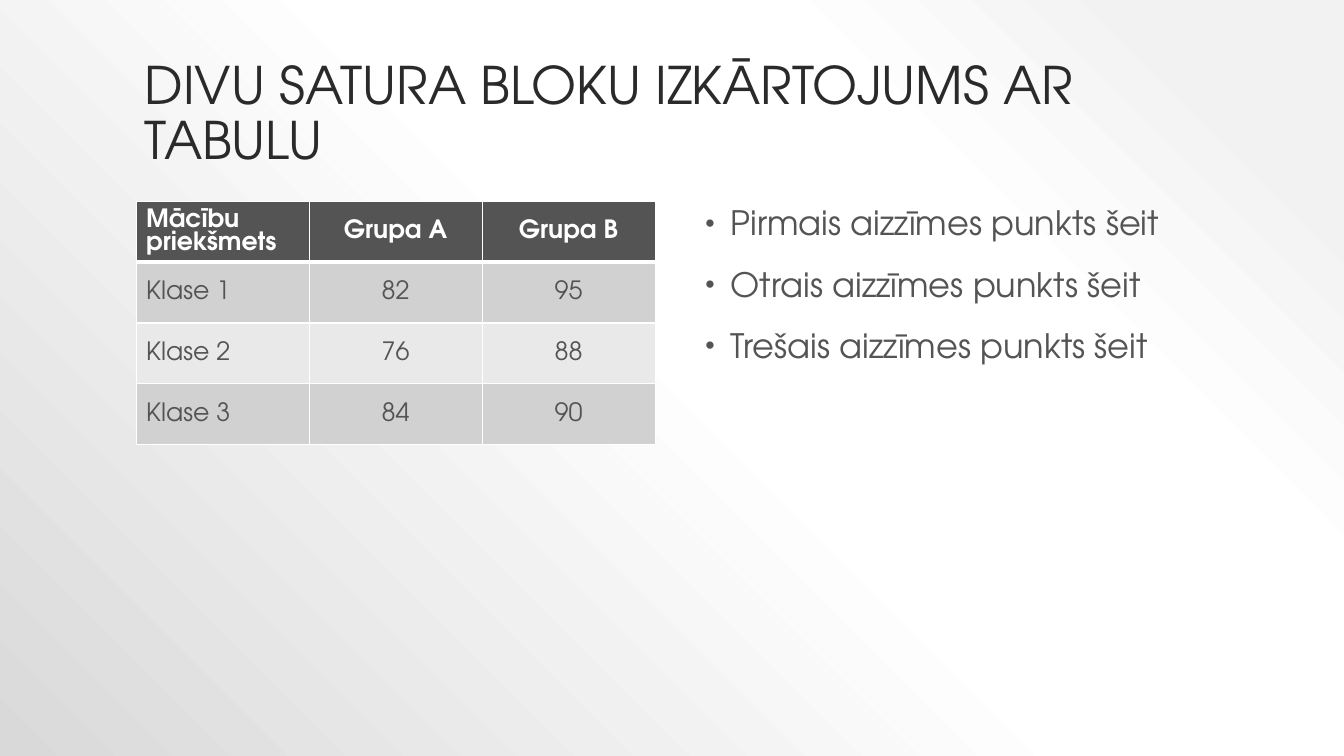
from pptx import Presentation
from pptx.dml.color import RGBColor
from pptx.enum.text import MSO_ANCHOR, PP_ALIGN
from pptx.oxml import parse_xml
from pptx.oxml.ns import nsdecls
from pptx.util import Cm, Pt

TITLE = "DIVU SATURA BLOKU IZKĀRTOJUMS AR TABULU"
ROWS = [
    ("Mācību priekšmets", "Grupa A", "Grupa B"),
    ("Klase 1", "82", "95"),
    ("Klase 2", "76", "88"),
    ("Klase 3", "84", "90"),
]
BULLETS = [
    "Pirmais aizzīmes punkts šeit",
    "Otrais aizzīmes punkts šeit",
    "Trešais aizzīmes punkts šeit",
]
BACKGROUND_STOPS = [(10, "F2F2F2"), (28, "FFFFFF"), (48, "FFFFFF"), (100, "D9D9D9")]

FONT = "TeX Gyre Adventor"
INK = RGBColor(0x2A, 0x2A, 0x2A)
GREY = RGBColor(0x54, 0x54, 0x54)
WHITE = RGBColor(0xFF, 0xFF, 0xFF)
BANDS = RGBColor(0xE9, 0xE9, 0xE9), RGBColor(0xD1, 0xD1, 0xD1)
MIDDLE, BOTTOM, TOP = MSO_ANCHOR.MIDDLE, MSO_ANCHOR.BOTTOM, MSO_ANCHOR.TOP
LEFT, CENTER = PP_ALIGN.LEFT, PP_ALIGN.CENTER

CONTENT_TOP = Cm(5.08)
COLUMN_WIDTH, ROW_HEIGHT = Cm(4.36), Cm(1.53)


def style(p, size, color, bold=False, align=LEFT, spacing=0.9):
    p.alignment, p.line_spacing = align, spacing
    f = p.font
    f.name, f.size, f.bold = FONT, Pt(size), bold
    f.color.rgb = color


def place(shape, left, top, width, height):
    shape.left, shape.top, shape.width, shape.height = left, top, width, height


def set_background(s):
    stops = "".join(
        f'<a:gs pos="{pos * 1000}"><a:srgbClr val="{color}"/></a:gs>'
        for pos, color in BACKGROUND_STOPS
    )
    s.background.fill.solid()
    bg_pr = s.element.cSld.bg.bgPr
    bg_pr.replace(bg_pr[0], parse_xml(
        f'<a:gradFill {nsdecls("a")} rotWithShape="1"><a:gsLst>{stops}</a:gsLst>'
        '<a:path path="circle"><a:fillToRect l="100000" b="100000"/></a:path>'
        '</a:gradFill>'
    ))


def add_borders(cell, is_header):
    """Insert white borders ahead of the cell's fill, thicker under the header."""
    tc_pr = cell._tc.get_or_add_tcPr()
    for i, side in enumerate(("lnL", "lnR", "lnT", "lnB")):
        width = Pt(3 if is_header and side == "lnB" else 1)
        tc_pr.insert(i, parse_xml(
            f'<a:{side} {nsdecls("a")} w="{width}"><a:solidFill>'
            f'<a:srgbClr val="{WHITE}"/></a:solidFill></a:{side}>'
        ))


def add_bullet(p):
    p_pr = p._p.get_or_add_pPr()
    p_pr.set("marL", str(Cm(0.76)))
    p_pr.set("indent", str(-Cm(0.64)))
    for tag in (
        f'<a:buClr {nsdecls("a")}><a:srgbClr val="{GREY}"/></a:buClr>',
        f'<a:buSzPct {nsdecls("a")} val="80000"/>',
        f'<a:buFont {nsdecls("a")} typeface="Arial"/>',
        f'<a:buChar {nsdecls("a")} char="•"/>',
    ):
        p_pr.insert_element_before(parse_xml(tag), "a:tabLst", "a:defRPr", "a:extLst")


def fill_table(table):
    for column in table.columns:
        column.width = COLUMN_WIDTH
    for i, row in enumerate(ROWS):
        table.rows[i].height = ROW_HEIGHT
        is_header = i == 0
        for j, text in enumerate(row):
            cell = table.cell(i, j)
            cell.text = text
            cell.vertical_anchor = MIDDLE
            cell.fill.solid()
            cell.fill.fore_color.rgb = GREY if is_header else BANDS[i % 2]
            add_borders(cell, is_header)
            style(cell.text_frame.paragraphs[0], 18, WHITE if is_header else GREY,
                  is_header, CENTER if j else LEFT, 1.0)


prs = Presentation()
prs.slide_width, prs.slide_height = Cm(33.87), Cm(19.05)
s = prs.slides.add_slide(prs.slide_layouts[1])
set_background(s)

title = s.shapes.title
place(title, Cm(3.39), Cm(0.76), Cm(27.1), Cm(3.68))
title.text_frame.text = TITLE
title.text_frame.vertical_anchor = BOTTOM
style(title.text_frame.paragraphs[0], 37, INK)

table_frame = s.shapes.add_table(
    len(ROWS), len(ROWS[0]), Cm(3.43), CONTENT_TOP,
    COLUMN_WIDTH * len(ROWS[0]), ROW_HEIGHT * len(ROWS))
fill_table(table_frame.table)

body = s.placeholders[1]
place(body, Cm(17.4), CONTENT_TOP, Cm(13.08), Cm(12.07))
tf = body.text_frame
tf.vertical_anchor = TOP
tf.text = "\n".join(BULLETS)
for p in tf.paragraphs:
    style(p, 24, GREY)
    p.space_before = Pt(18)
    add_bullet(p)

prs.save("out.pptx")
